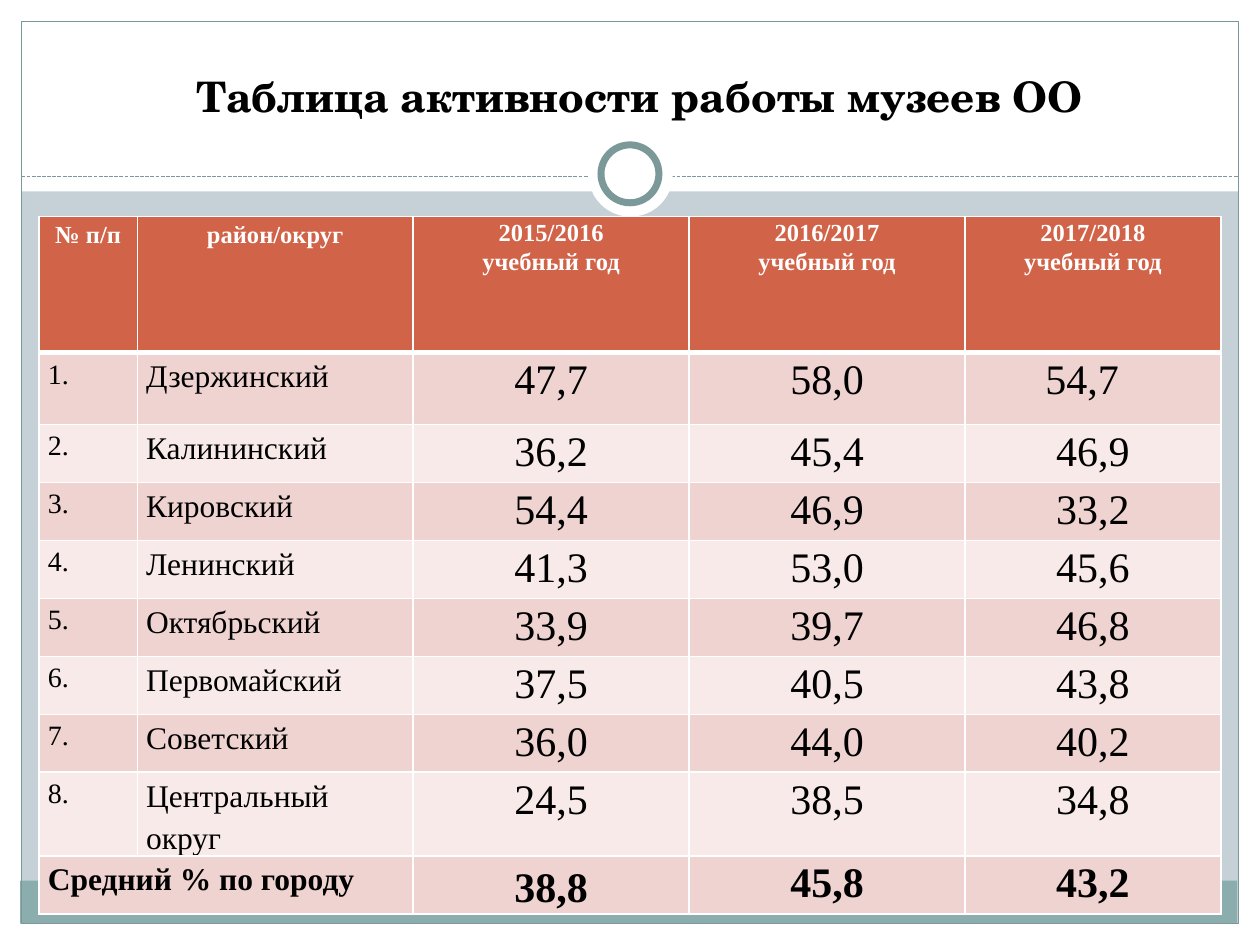
from lxml import etree
from pptx import Presentation, util as u
from pptx.dml.color import RGBColor
from pptx.enum import dml, shapes, text
from pptx.oxml.ns import qn

CENTER, JUSTIFY = text.PP_ALIGN.CENTER, text.PP_ALIGN.JUSTIFY
HEADERS = ["№ п/п", "район/округ"] + [
    f"{year}/{year + 1}\nучебный год" for year in (2015, 2016, 2017)]
DISTRICTS = [
    ("Дзержинский", "47,7", "58,0", "54,7"),
    ("Калининский", "36,2", "45,4", "46,9"),
    ("Кировский", "54,4", "46,9", "33,2"),
    ("Ленинский", "41,3", "53,0", "45,6"),
    ("Октябрьский", "33,9", "39,7", "46,8"),
    ("Первомайский", "37,5", "40,5", "43,8"),
    ("Советский", "36,0", "44,0", "40,2"),
    ("Центральный округ", "24,5", "38,5", "34,8"),
]
AVERAGES = ["Средний % по городу", "", "38,8", "45,8", "43,2"]
COLUMN_WIDTHS = [0.78, 2.19, 2.19, 2.19, 2.03]
ROW_HEIGHTS = [1.08, 0.57] + [0.46] * 6 + [0.6, 0.46]


def color(value):
    return RGBColor.from_string(value)


def assign(target, values):
    for name, value in values.items():
        setattr(target, name, value)


class SlideBuilder:
    white, accent, footer = "FFFFFF", "7C999A", "8CADAE"
    header, bands = "D16349", ("F7EAE9", "EED3D0")
    title_font, table_font = "TeX Gyre Schola", "Times New Roman"

    def __init__(self, slide):
        self.slide = slide

    def background(self, fill):
        self.slide.background.fill.solid()
        self.slide.background.fill.fore_color.rgb = color(fill)

    def shape(self, kind, box, fill=None, line_width=None):
        shape = self.slide.shapes.add_shape(kind, *map(u.Inches, box))
        shape.shadow.inherit = False
        if fill:
            shape.fill.solid()
            shape.fill.fore_color.rgb = color(fill)
        else:
            shape.fill.background()
        if line_width:
            shape.line.color.rgb = color(self.accent)
            shape.line.width = u.Pt(line_width)
        else:
            shape.line.fill.background()

    def dashed_line(self, *ends):
        connector = self.slide.shapes.add_connector(
            shapes.MSO_CONNECTOR.STRAIGHT, *map(u.Inches, ends))
        connector.line.color.rgb = color(self.accent)
        assign(connector.line, {"width": u.Pt(0.75),
                                "dash_style": dml.MSO_LINE.SQUARE_DOT})
        etree.SubElement(connector._element.spPr, qn("a:effectLst"))

    def put_text(self, frame, content, size, font, align=CENTER, bold=False,
                 ink="000000", spacing=1.0):
        frame.text = content
        for paragraph in frame.paragraphs:
            assign(paragraph, {"alignment": align, "line_spacing": spacing})
            for run in paragraph.runs:
                assign(run.font, {"size": u.Pt(size), "name": font, "bold": bold})
                run.font.color.rgb = color(ink)

    def title(self, content, box):
        frame = self.slide.shapes.add_textbox(*map(u.Inches, box)).text_frame
        frame.word_wrap = True
        self.put_text(frame, content, 24, self.title_font, bold=True)

    def table(self, left, top, widths, heights):
        box = (left, top, sum(widths), sum(heights))
        table = self.slide.shapes.add_table(
            len(heights), len(widths), *map(u.Inches, box)).table
        assign(table, {"first_row": False, "horz_banding": False})
        for column, width in zip(table.columns, widths):
            column.width = u.Inches(width)
        for row, height in zip(table.rows, heights):
            row.height = u.Inches(height)
        return table

    def cell(self, cell, content, fill, top=1, bottom=1, **style):
        side, edge = u.Inches(0.07), u.Inches(0)
        assign(cell, {"margin_left": side, "margin_right": side,
                      "margin_top": edge, "margin_bottom": edge})
        self.put_text(cell.text_frame, content, font=self.table_font, **style)
        properties = cell._tc.get_or_add_tcPr()
        for tag, width in (("lnL", 1), ("lnR", 1), ("lnT", top), ("lnB", bottom)):
            border = etree.SubElement(properties, qn(f"a:{tag}"), w=str(u.Pt(width)))
            solid = etree.SubElement(border, qn("a:solidFill"))
            etree.SubElement(solid, qn("a:srgbClr"), val=self.white)
        cell.fill.solid()
        cell.fill.fore_color.rgb = color(fill)


def main():
    presentation = Presentation()
    assign(presentation, {"slide_width": u.Inches(10), "slide_height": u.Inches(7.5)})
    builder = SlideBuilder(presentation.slides.add_slide(presentation.slide_layouts[6]))
    rectangle, oval = shapes.MSO_SHAPE.RECTANGLE, shapes.MSO_SHAPE.OVAL

    # White margins, footer band and frame
    builder.background("C5D1D7")
    for box in ((0, 7.33, 10, 0.17), (0, 0, 10, 1.52),
                (0, 0, 0.17, 7.5), (9.83, 0, 0.17, 7.5)):
        builder.shape(rectangle, box, builder.white)
    builder.shape(rectangle, (0.16, 6.99, 9.66, 0.34), builder.footer)
    builder.shape(rectangle, (0.17, 0.17, 9.66, 7.16), line_width=0.75)

    # Divider with ring
    builder.dashed_line(0.17, 1.4, 9.83, 1.4)
    builder.shape(oval, (4.67, 1.05, 0.67, 0.67), builder.white)
    builder.shape(oval, (4.77, 1.15, 0.46, 0.46), builder.white, 4)

    # Table header
    table = builder.table(0.31, 1.72, COLUMN_WIDTHS, ROW_HEIGHTS)
    for column, heading in enumerate(HEADERS):
        builder.cell(table.cell(0, column), heading, builder.header, bottom=3,
                     size=14, bold=True, ink=builder.white,
                     spacing=1.2 if column < 2 else 1.1)

    # Districts and city average
    rows = [(f"{number}.", *district) for number, district in enumerate(DISTRICTS, 1)]
    for index, row in enumerate(rows + [AVERAGES], 1):
        average = row is AVERAGES
        sizes = [18 if average else 16, 18, 24, 24, 24]
        for column, content in enumerate(row):
            label = column < 2
            builder.cell(table.cell(index, column), content, builder.bands[index % 2],
                         top=3 if index == 1 else 1, size=sizes[column], bold=average,
                         align=JUSTIFY if label else CENTER,
                         spacing=1.2 if label or average and column == 2 else 1.1)
    table.cell(1, 4).margin_right = u.Inches(0.24)
    table.cell(9, 0).merge(table.cell(9, 1))

    # Title
    builder.title("Таблица активности работы музеев ОО", (1.25, 0.51, 7.66, 0.5))
    presentation.save("out.pptx")


if __name__ == "__main__":
    main()
